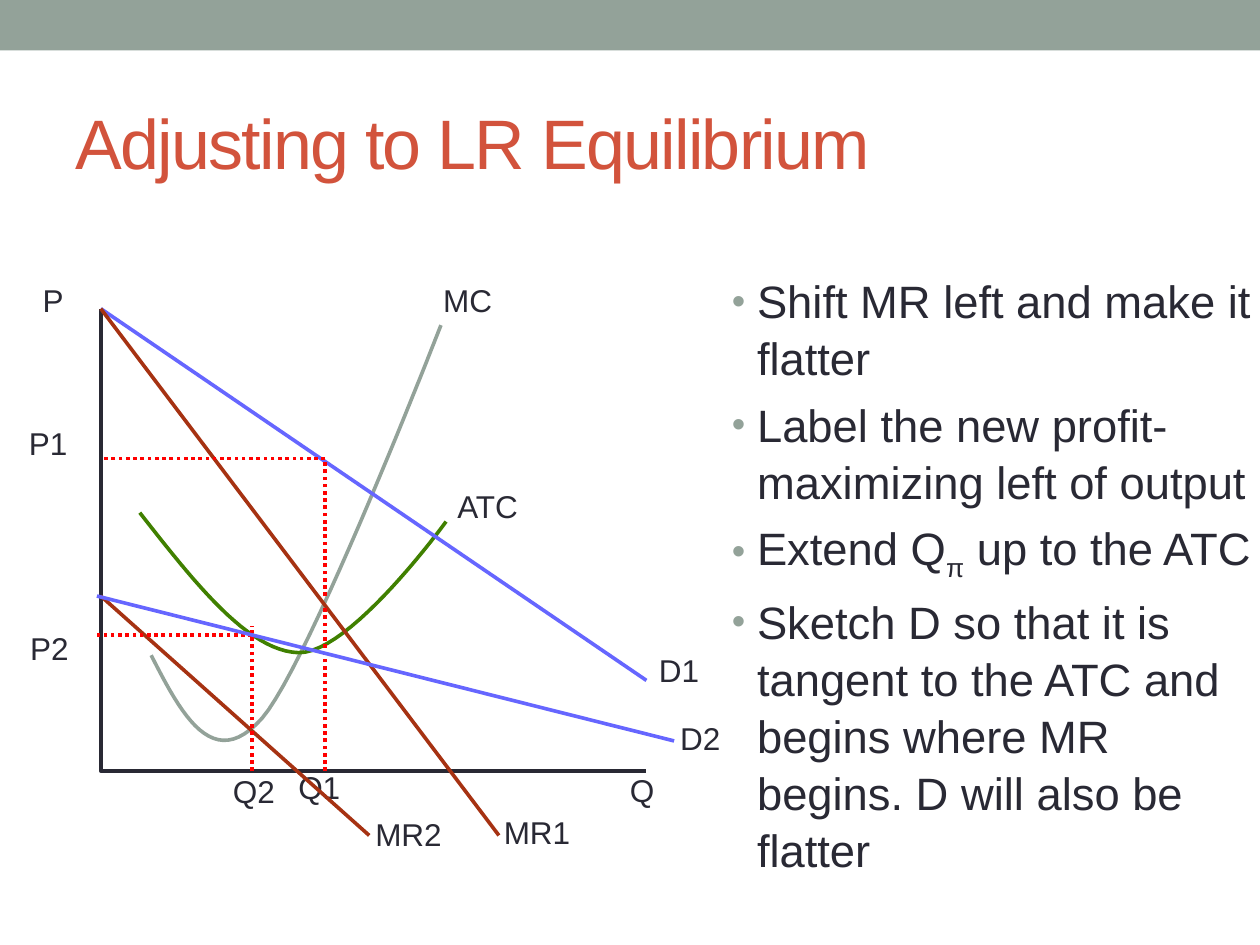
import lxml.etree
import pptx
import pptx.dml.color
import pptx.enum.dml
import pptx.enum.shapes
import pptx.enum.text
import pptx.oxml.ns
import pptx.util

Pt = pptx.util.Pt
qn = pptx.oxml.ns.qn

FONT = "Arial"
SAGE, RUST, INK = "93A299", "D2533C", "292934"
GREEN, BLUE, BROWN, RED = "408000", "6666FF", "A63212", "FF0000"
LINE_WIDTH = 2.08
CURVE_STEPS = 24

# Diagram coordinates are measured from the top of the price axis.
MARGINAL_COST = [(28.8, 198), (46.1, 231.8), (64.1, 265.7), (92.2, 234),
                 (119.5, 202.3), (194.4, 9.4), (194.4, 9.4)]
AVERAGE_COST = [(22.3, 116.6), (53.3, 156.2), (84.2, 195.8), (113, 196.6),
                (142.6, 197.3), (197.3, 121.7), (197.3, 121.7)]
PRICE_1, PRICE_2, INTERCEPT_2 = 85.7, 186.5, 164.2
QUANTITY_1, QUANTITY_2 = 128.2, 86.4
LABELS = [
    ("Q", 295.2, 260.6, 45.4, 39.6), ("P", -40.3, -19.4, 37.4, 39.6),
    ("MC", 188.6, -19.4, 68.4, 39.6), ("ATC", 196.6, 98.6, 72.7, 39.6),
    ("D1", 311.8, 192.2, 37.4, 28.8), ("D2", 324, 231.1, 37.4, 28.8),
    ("MR1", 223.2, 284.4, 52.6, 28.8), ("MR2", 149.8, 285.8, 52.6, 28.8),
    ("Q1", 105.8, 259.2, 38.9, 28.8), ("Q2", 68.4, 261.4, 38.9, 28.8),
    ("P1", -48.2, 62.6, 36.7, 28.8), ("P2", -47.5, 179.3, 36.7, 28.8),
]
ADVICE = [
    [("Shift MR left and make it flatter", 0)],
    [("Label the new profit-maximizing left of output", 0)],
    [("Extend Q", 0), ("π", -25), (" up to the ATC", 0)],
    [("Sketch D so that it is tangent to the ATC and begins where MR begins. "
      "D will also be flatter", 0)],
]


def rgb(color):
    return pptx.dml.color.RGBColor.from_string(color)


def add_run(paragraph, text, size, color):
    run = paragraph.add_run()
    run.text = text
    run.font.name = FONT
    run.font.size = Pt(size)
    run.font.color.rgb = rgb(color)
    return run


def add_text_frame(slide, left, top, width, height, wrap=True):
    text_box = slide.shapes.add_textbox(Pt(left), Pt(top), Pt(width), Pt(height))
    text_box.text_frame.word_wrap = wrap
    return text_box.text_frame


def add_band(slide, left, top, width, height):
    band = slide.shapes.add_shape(pptx.enum.shapes.MSO_SHAPE.RECTANGLE,
                                  Pt(left), Pt(top), Pt(width), Pt(height))
    band.shadow.inherit = False
    band.fill.solid()
    band.fill.fore_color.rgb = rgb(SAGE)
    band.line.fill.background()


def add_title(slide, left, top, width, height):
    frame = add_text_frame(slide, left, top, width, height)
    frame.vertical_anchor = pptx.enum.text.MSO_ANCHOR.MIDDLE
    run = add_run(frame.paragraphs[0], "Adjusting to LR Equilibrium", 40, RUST)
    run.font._element.set("spc", "-100")


def set_bullet(paragraph):
    properties = paragraph._p.get_or_add_pPr()
    properties.set("marL", str(Pt(14.4)))
    properties.set("indent", str(-Pt(14.4)))
    color = lxml.etree.SubElement(properties, qn("a:buClr"))
    lxml.etree.SubElement(color, qn("a:srgbClr"), val=SAGE)
    lxml.etree.SubElement(properties, qn("a:buSzPct"), val="85000")
    lxml.etree.SubElement(properties, qn("a:buFont"), typeface=FONT)
    lxml.etree.SubElement(properties, qn("a:buChar"), char="•")


def add_advice(slide, left, top, width, height):
    frame = add_text_frame(slide, left, top, width, height)
    for index, runs in enumerate(ADVICE):
        paragraph = frame.add_paragraph() if index else frame.paragraphs[0]
        paragraph.line_spacing = 1.05
        paragraph.space_before = Pt(5.2)
        set_bullet(paragraph)
        for text, baseline in runs:
            run = add_run(paragraph, text, 25.9, INK)
            if baseline:
                run.font._element.set("baseline", str(baseline * 1000))


def bezier_points(controls):
    """Sample a chain of cubic Bézier segments that share their end points."""
    points = [controls[0]]
    for first in range(0, len(controls) - 1, 3):
        segment = controls[first:first + 4]
        for step in range(1, CURVE_STEPS + 1):
            t = step / CURVE_STEPS
            weights = ((1 - t) ** 3, 3 * t * (1 - t) ** 2, 3 * t ** 2 * (1 - t), t ** 3)
            points.append(tuple(sum(weight * point[axis]
                                    for weight, point in zip(weights, segment))
                                for axis in (0, 1)))
    return points


def add_diagram(slide, left, top, width, height):
    """Draw the cost and demand curves; the box is the area between the axes."""
    def add_outline(points, color):
        places = [(Pt(left + x), Pt(top + y)) for x, y in points]
        builder = slide.shapes.build_freeform(*places[0], scale=1.0)
        builder.add_line_segments(places[1:], close=False)
        outline = builder.convert_to_shape()
        outline.shadow.inherit = False
        outline.fill.background()
        outline.line.color.rgb = rgb(color)
        outline.line.width = Pt(LINE_WIDTH)

    def add_line(start, end, color, dotted=False):
        connector = slide.shapes.add_connector(
            pptx.enum.shapes.MSO_CONNECTOR.STRAIGHT,
            Pt(left + start[0]), Pt(top + start[1]), Pt(left + end[0]), Pt(top + end[1]))
        connector.line.color.rgb = rgb(color)
        connector.line.width = Pt(LINE_WIDTH)
        if dotted:
            connector.line.dash_style = pptx.enum.dml.MSO_LINE.ROUND_DOT
        lxml.etree.SubElement(connector._element.spPr, qn("a:effectLst"))

    add_outline([(0, 0), (0, height), (width, height)], INK)
    add_outline(bezier_points(MARGINAL_COST), SAGE)
    add_outline(bezier_points(AVERAGE_COST), GREEN)

    for text, x, y, label_width, label_height in LABELS:
        frame = add_text_frame(slide, left + x, top + y, label_width, label_height, wrap=False)
        frame.auto_size = pptx.enum.text.MSO_AUTO_SIZE.SHAPE_TO_FIT_TEXT
        add_run(frame.paragraphs[0], text, 18, INK)

    add_line((0, 0), (width, 212.4), BLUE)
    add_line((0, 0), (227.5, 301), BROWN)
    add_line((0, INTERCEPT_2), (153.4, 301), BROWN)
    for start, end in [
        ((QUANTITY_1, height), (QUANTITY_1, 169.9)),
        ((QUANTITY_1, INTERCEPT_2), (QUANTITY_1, PRICE_1)),
        ((QUANTITY_1, PRICE_1), (0, PRICE_1)),
        ((QUANTITY_2, height), (QUANTITY_2, 181.4)),
        ((QUANTITY_2, PRICE_2), (-2.2, PRICE_2)),
    ]:
        add_line(start, end, RED, dotted=True)
    add_line((-2.2, INTERCEPT_2), (327.6, 247), BLUE)


def main():
    presentation = pptx.Presentation()
    presentation.slide_width = Pt(720)
    presentation.slide_height = Pt(540)
    slide = presentation.slides.add_slide(presentation.slide_layouts[6])
    add_band(slide, 0, 0, 720, 28.8)
    add_title(slide, 36, 41.8, 648, 77.8)
    add_advice(slide, 411.1, 151.2, 318.2, 371.5)
    add_diagram(slide, 57.6, 176.4, 311.8, 264.2)
    presentation.save("out.pptx")


if __name__ == "__main__":
    main()
